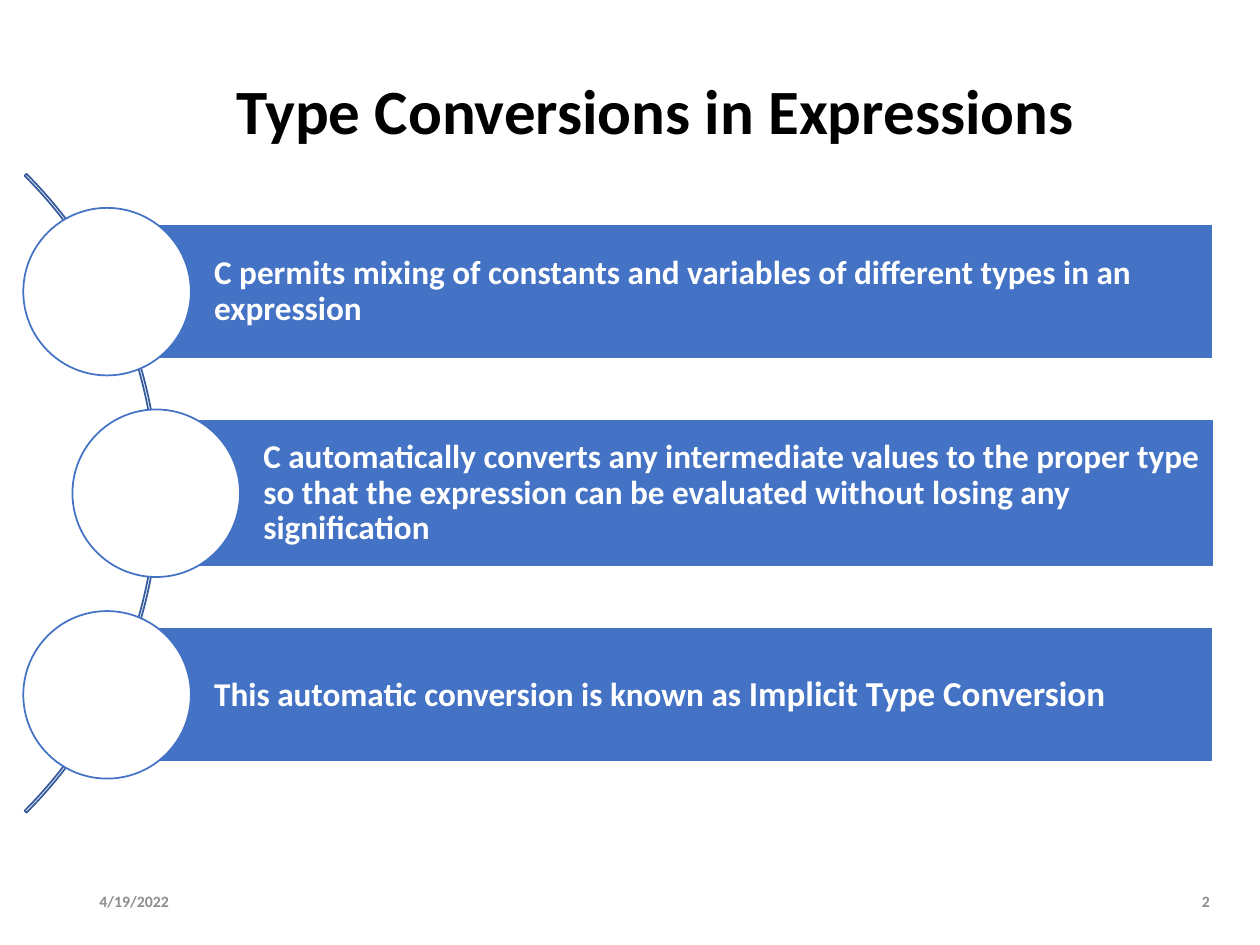
import pptx
import pptx.dml.color
import pptx.enum.shapes
import pptx.enum.text
import pptx.util

Inches = pptx.util.Inches
SHAPE = pptx.enum.shapes.MSO_SHAPE
ALIGN = pptx.enum.text.PP_ALIGN
BLUE, DARK_BLUE, WHITE, BLACK, GREY = "4472C4", "365B9D", "FFFFFF", "000000", "8C8C8C"

CIRCLE = 1.33
FIRST_CENTRE, ROW_STEP = 2.315, 1.6
BAR_RIGHT = 9.63

# Per row: circle centre x, bar height, text runs with their sizes
ROWS = [
    (0.85, 1.07, [("C permits mixing of constants and variables of different "
                   "types in an expression", 19)]),
    (1.24, 1.17, [("C automatically converts any intermediate values to the "
                   "proper type so that the expression can be evaluated "
                   "without losing any signification", 19)]),
    (0.85, 1.07, [("This automatic conversion is known as ", 19),
                  ("Implicit Type Conversion", 20)]),
]


def rgb(hex_color):
    return pptx.dml.color.RGBColor.from_string(hex_color)


def write(tf, runs, color, align=ALIGN.LEFT, spacing=1.0):
    """Fill a text frame with one bold paragraph of (text, size) runs."""
    tf.word_wrap = True
    tf.vertical_anchor = pptx.enum.text.MSO_ANCHOR.MIDDLE
    p = tf.paragraphs[0]
    p.alignment = align
    p.line_spacing = spacing
    for text, size in runs:
        r = p.add_run()
        r.text = text
        r.font.name = "Calibri"
        r.font.size = pptx.util.Pt(size)
        r.font.bold = True
        r.font.color.rgb = rgb(color)


def add_title(slide, text):
    title = slide.shapes.title
    title.left, title.top, title.width, title.height = map(
        Inches, (0.69, 0.56, 9.02, 0.69))
    write(title.text_frame, [(text, 36)], BLACK, ALIGN.CENTER, 0.9)


def add_footer(slide, text, left, width, align):
    box = slide.shapes.add_textbox(*map(Inches, (left, 6.95, width, 0.4)))
    write(box.text_frame, [(text, 9)], GREY, align)


def add_shape(slide, kind, left, top, width, height, fill, line):
    sp = slide.shapes.add_shape(kind, *map(Inches, (left, top, width, height)))
    sp.shadow.inherit = False
    if fill:
        sp.fill.solid()
        sp.fill.fore_color.rgb = rgb(fill)
    else:
        sp.fill.background()
    sp.line.color.rgb = rgb(line)
    sp.line.width = pptx.util.Pt(1)
    return sp


def add_arc(slide):
    arc = add_shape(slide, SHAPE.BLOCK_ARC, -5.91, 0.33, 7.17, 7.17, None, DARK_BLUE)
    for i, value in enumerate((189, 27, 0.003)):
        arc.adjustments[i] = value


def add_row(slide, centre_x, centre_y, bar_height, runs):
    """Draw a text bar with a circle over its left end."""
    bar = add_shape(slide, SHAPE.RECTANGLE, centre_x, centre_y - bar_height / 2,
                    BAR_RIGHT - centre_x, bar_height, BLUE, WHITE)
    tf = bar.text_frame
    tf.margin_left = Inches(0.85)
    tf.margin_right = tf.margin_top = tf.margin_bottom = Inches(0.05)
    write(tf, runs, WHITE, spacing=0.9)
    add_shape(slide, SHAPE.OVAL, centre_x - CIRCLE / 2, centre_y - CIRCLE / 2,
              CIRCLE, CIRCLE, WHITE, BLUE)


def main():
    prs = pptx.Presentation()
    prs.slide_width, prs.slide_height = Inches(10), Inches(7.5)
    slide = prs.slides.add_slide(prs.slide_layouts[5])
    add_title(slide, "Type Conversions in Expressions")
    add_footer(slide, "4/19/2022", 0.69, 0.95, ALIGN.LEFT)
    add_footer(slide, "2", 9.31, 0.39, ALIGN.RIGHT)
    add_arc(slide)
    for i, (centre_x, bar_height, runs) in enumerate(ROWS):
        add_row(slide, centre_x, FIRST_CENTRE + i * ROW_STEP, bar_height, runs)
    prs.save("out.pptx")


if __name__ == "__main__":
    main()
